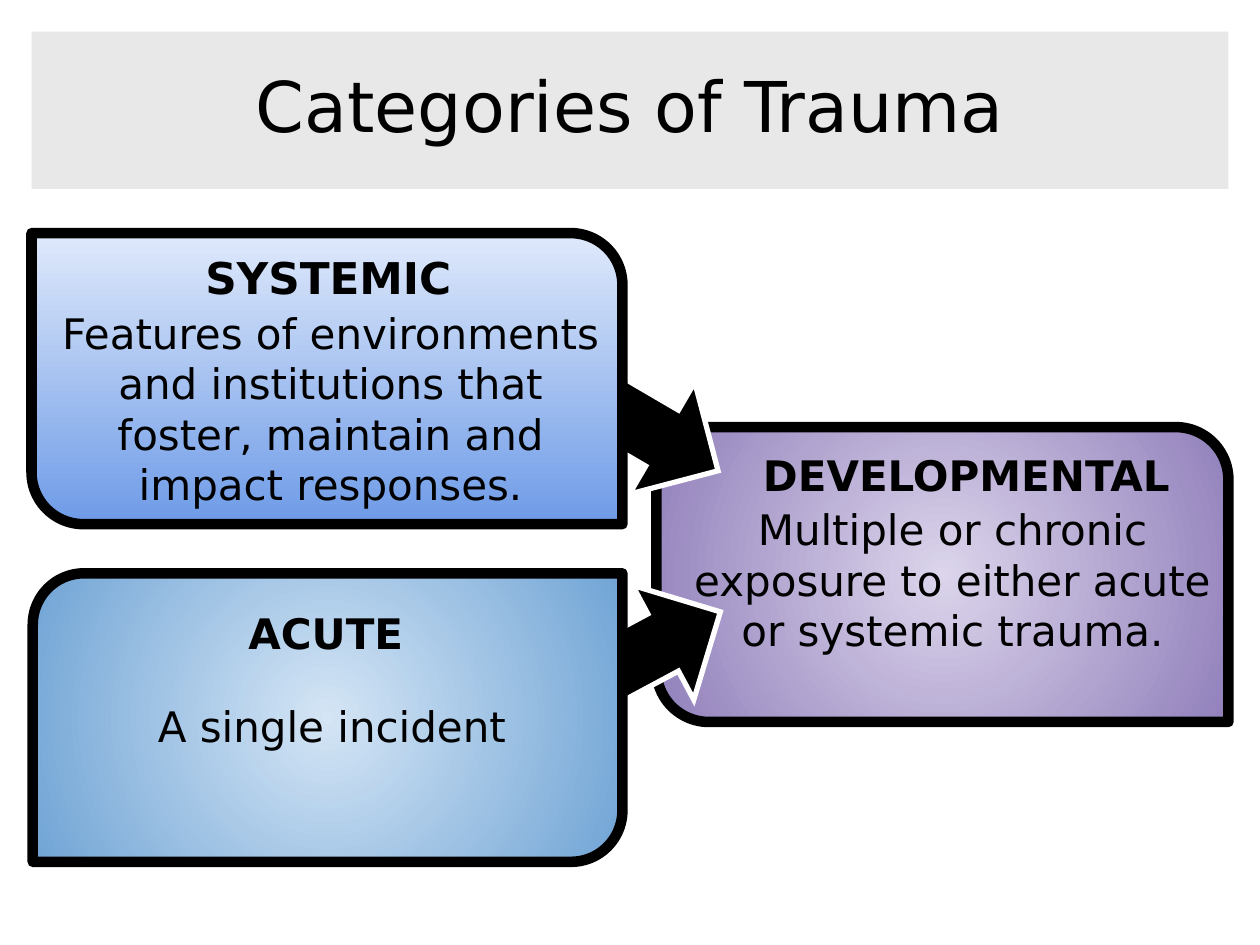
from dataclasses import dataclass

import lxml.etree
import pptx
import pptx.dml.color
import pptx.enum.shapes
import pptx.enum.text
import pptx.oxml
import pptx.oxml.ns
import pptx.shapes.autoshape
import pptx.slide
import pptx.text.text
import pptx.util

PX = 9144  # 100 px to the inch
SHAPES = pptx.enum.shapes.MSO_SHAPE
qn = pptx.oxml.ns.qn


@dataclass(frozen=True)
class Theme:
    font: str = "DejaVu Sans"
    ink: str = "000000"
    paper: str = "FFFFFF"
    banner: str = "E8E8E8"
    systemic: tuple[str, str] = ("DFE9FB", "6E9BE7")
    acute: tuple[str, str] = ("D4E5F5", "70A4D5")
    developmental: tuple[str, str] = ("DBD4EB", "9180BB")
    title_size: int = 40
    large_heading_size: int = 25
    text_size: int = 24
    card_line: int = 6
    arrow_line: int = 3
    corner: float = 0.178


THEME = Theme()


@dataclass(frozen=True)
class Box:
    left: int
    top: int
    width: int
    height: int

    def emu(self) -> tuple[int, int, int, int]:
        return self.left * PX, self.top * PX, self.width * PX, self.height * PX


@dataclass(frozen=True)
class Card:
    frame: Box
    colors: tuple[str, str]
    heading: str
    heading_box: Box
    body: str
    body_box: Box
    radial: bool = True
    rounds_top_left: bool = False
    heading_size: int = THEME.text_size


@dataclass(frozen=True)
class Arrow:
    box: Box
    rotation: float


DEVELOPMENTAL = Card(
    Box(521, 339, 454, 234), THEME.developmental,
    "DEVELOPMENTAL", Box(579, 347, 376, 41),
    "Multiple or chronic exposure to either acute or systemic trauma.",
    Box(530, 390, 452, 76))
ACUTE = Card(
    Box(26, 455, 468, 229), THEME.acute,
    "ACUTE", Box(74, 472, 369, 50),
    "A single incident", Box(66, 546, 395, 65),
    rounds_top_left=True)
SYSTEMIC = Card(
    Box(25, 185, 469, 231), THEME.systemic,
    "SYSTEMIC", Box(60, 189, 401, 53),
    "Features of environments and institutions that foster, maintain and impact responses.",
    Box(31, 234, 463, 126),
    radial=False, heading_size=THEME.large_heading_size)
ARROWS = (Arrow(Box(377, 270, 207, 103), 30.3),
          Arrow(Box(377, 483, 207, 103), 331.8))


def rgb(value: str) -> pptx.dml.color.RGBColor:
    return pptx.dml.color.RGBColor.from_string(value)


def write(frame: pptx.text.text.TextFrame, text: str, size: int, bold: bool = False) -> None:
    frame.text = text
    frame.word_wrap = True
    paragraph = frame.paragraphs[0]
    paragraph.alignment = pptx.enum.text.PP_ALIGN.CENTER
    font = paragraph.runs[0].font
    font.name, font.size, font.bold = THEME.font, pptx.util.Pt(size), bold
    font.color.rgb = rgb(THEME.ink)


def add_text(slide: pptx.slide.Slide, box: Box, text: str, size: int, bold: bool = False) -> None:
    frame = slide.shapes.add_textbox(*box.emu()).text_frame
    frame.margin_left = frame.margin_right = 10 * PX
    frame.margin_top = frame.margin_bottom = 10 * PX
    write(frame, text, size, bold)


def add_outlined(slide: pptx.slide.Slide, kind: SHAPES, box: Box,
                 color: str, width: int) -> pptx.shapes.autoshape.Shape:
    shape = slide.shapes.add_shape(kind, *box.emu())
    shape.shadow.inherit = False
    shape.line.color.rgb = rgb(color)
    shape.line.width = pptx.util.Pt(width)
    return shape


def fill_gradient(shape: pptx.shapes.autoshape.Shape,
                  colors: tuple[str, str], radial: bool) -> None:
    shape.fill.gradient()
    for stop, color, position in zip(shape.fill.gradient_stops, colors, (0, 1)):
        stop.color.rgb = rgb(color)
        stop.position = position
    if not radial:
        shape.fill.gradient_angle = 270
        return
    # A gradient from the centre needs a path in place of the angle
    gradient = shape.element.spPr.find(qn("a:gradFill"))
    linear = gradient.find(qn("a:lin"))
    circle = lxml.etree.Element(qn("a:path"), path="circle")
    lxml.etree.SubElement(circle, qn("a:fillToRect"),
                          dict.fromkeys("ltrb", "50000"))
    gradient.replace(linear, circle)


def add_card(slide: pptx.slide.Slide, card: Card) -> None:
    shape = add_outlined(slide, SHAPES.ROUND_2_DIAG_RECTANGLE, card.frame,
                         THEME.ink, THEME.card_line)
    rounded = 0 if card.rounds_top_left else 1
    shape.adjustments[rounded] = THEME.corner
    shape.adjustments[1 - rounded] = 0
    fill_gradient(shape, card.colors, card.radial)
    add_text(slide, card.heading_box, card.heading, card.heading_size, bold=True)
    add_text(slide, card.body_box, card.body, THEME.text_size)


def add_arrow(slide: pptx.slide.Slide, arrow: Arrow) -> None:
    shape = add_outlined(slide, SHAPES.RIGHT_ARROW, arrow.box,
                         THEME.paper, THEME.arrow_line)
    shape.rotation = arrow.rotation
    shape.fill.solid()
    shape.fill.fore_color.rgb = rgb(THEME.ink)
    # Sharp corners
    line = shape.element.spPr.find(qn("a:ln"))
    lxml.etree.SubElement(line, qn("a:miter"), lim="800000")


def set_title(slide: pptx.slide.Slide, box: Box, text: str) -> None:
    title = slide.shapes.title
    title.left, title.top, title.width, title.height = box.emu()
    title.fill.solid()
    title.fill.fore_color.rgb = rgb(THEME.banner)
    write(title.text_frame, text, THEME.title_size)
    title.text_frame.vertical_anchor = pptx.enum.text.MSO_ANCHOR.MIDDLE
    title.text_frame.paragraphs[0].line_spacing = 0.9


def main() -> None:
    presentation = pptx.Presentation()
    presentation.slide_width, presentation.slide_height = 1000 * PX, 750 * PX
    slide = presentation.slides.add_slide(presentation.slide_layouts[5])

    set_title(slide, Box(25, 25, 950, 125), "Categories of Trauma")

    # The arrows lie over the result and under their causes
    add_card(slide, DEVELOPMENTAL)
    for arrow in ARROWS:
        add_arrow(slide, arrow)
    for cause in (ACUTE, SYSTEMIC):
        add_card(slide, cause)

    presentation.save("out.pptx")


if __name__ == "__main__":
    main()
